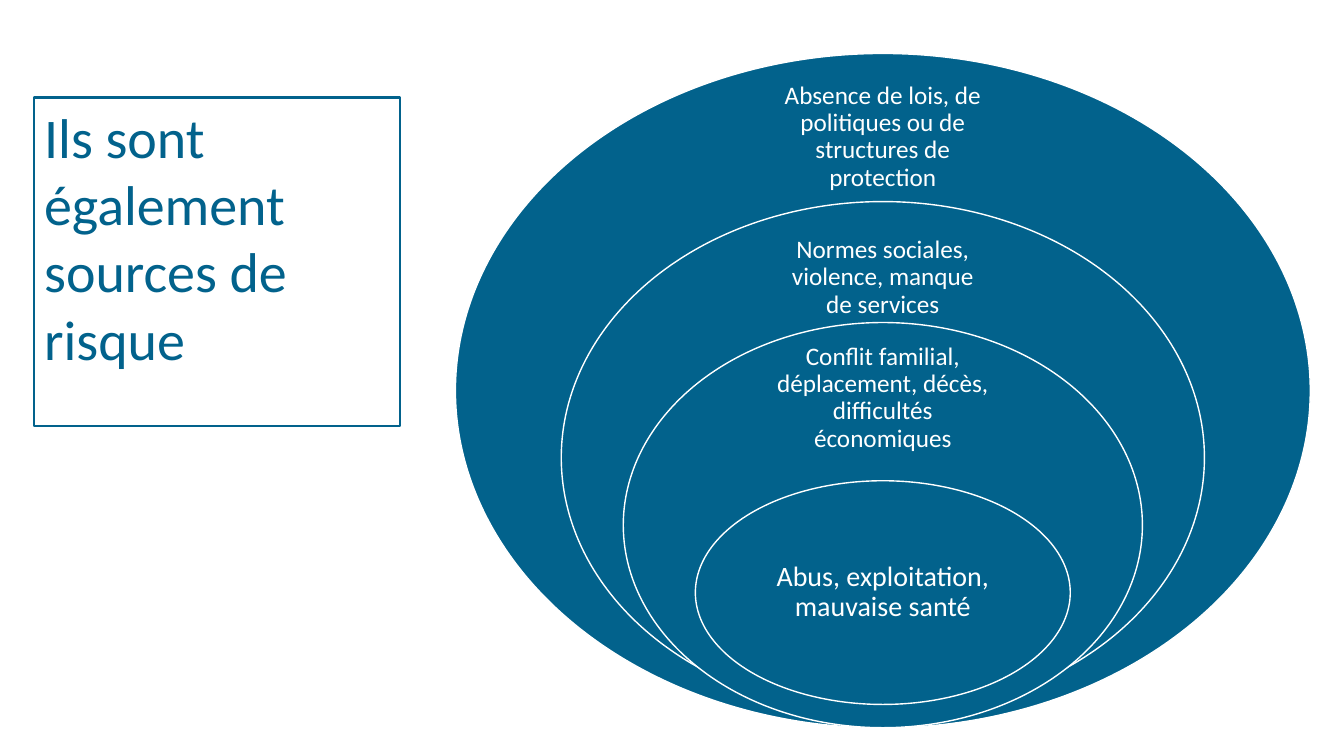
from pptx import Presentation
from pptx.dml.color import RGBColor
from pptx.enum.shapes import MSO_SHAPE
from pptx.enum.text import MSO_ANCHOR, PP_ALIGN
from pptx.util import Pt

BLUE = RGBColor(0x02, 0x62, 0x8C)
WHITE = RGBColor(0xFF, 0xFF, 0xFF)
FONT = "Calibri"
CENTER_X = 630.6  # shared vertical axis of the nested ellipses

# Ellipse (top, width, height), label (top, width, height), size, margin, text
RISK_LEVELS = [
    ((38.2, 610.6, 481.7), (61.9, 170.6, 72), 18, 10.1,
     "Absence de lois, de politiques ou de structures de protection"),
    ((144, 459.4, 365.8), (165.6, 160.6, 65.5), 18, 10.1,
     "Normes sociales, violence, manque de services"),
    ((230.4, 370.8, 289.4), (252, 172.8, 64.8), 18, 10.1,
     "Conflit familial, déplacement, décès, difficultés économiques"),
    ((343.4, 267.8, 159.8), (383, 189.4, 79.9), 20, 11.5,
     "Abus, exploitation, mauvaise santé"),
]


def write_text(shape, *lines, size, color, align=PP_ALIGN.LEFT,
               anchor=MSO_ANCHOR.TOP, margin=None, spacing=None):
    """Write one paragraph per line into the shape."""
    frame = shape.text_frame
    frame.word_wrap = True
    frame.vertical_anchor = anchor
    if margin is not None:
        frame.margin_left = frame.margin_right = Pt(margin)
        frame.margin_top = frame.margin_bottom = Pt(margin)
    for index, line in enumerate(lines):
        paragraph = frame.add_paragraph() if index else frame.paragraphs[0]
        paragraph.alignment = align
        paragraph.line_spacing = spacing
        run = paragraph.add_run()
        run.text = line
        run.font.name = FONT
        run.font.size = Pt(size)
        run.font.color.rgb = color


def add_outlined_shape(slide, kind, left, top, width, height, *,
                       fill, line, line_width):
    shape = slide.shapes.add_shape(kind, Pt(left), Pt(top), Pt(width), Pt(height))
    shape.shadow.inherit = False
    shape.fill.solid()
    shape.fill.fore_color.rgb = fill
    shape.line.color.rgb = line
    shape.line.width = Pt(line_width)
    return shape


def add_risk_level(slide, ellipse, label, size, margin, text):
    """Add an ellipse and its label, both centred on the shared axis."""
    top, width, height = ellipse
    add_outlined_shape(slide, MSO_SHAPE.OVAL, CENTER_X - width / 2, top,
                       width, height, fill=BLUE, line=WHITE, line_width=1)
    top, width, height = label
    text_box = slide.shapes.add_textbox(
        Pt(CENTER_X - width / 2), Pt(top), Pt(width), Pt(height))
    write_text(text_box, text, size=size, color=WHITE, align=PP_ALIGN.CENTER,
               anchor=MSO_ANCHOR.MIDDLE, margin=margin, spacing=0.9)


def main():
    presentation = Presentation()
    presentation.slide_width = Pt(960)
    presentation.slide_height = Pt(540)
    slide = presentation.slides.add_slide(presentation.slide_layouts[6])

    # Nested ellipses, from the outermost inwards
    for level in RISK_LEVELS:
        add_risk_level(slide, *level)

    # Framed title
    title = add_outlined_shape(slide, MSO_SHAPE.RECTANGLE, 24.5, 69.8, 261.4, 234.7,
                               fill=WHITE, line=BLUE, line_width=1.75)
    write_text(title, "Ils sont également", "sources de risque",
               size=40, color=BLUE)

    presentation.save("out.pptx")


if __name__ == "__main__":
    main()
